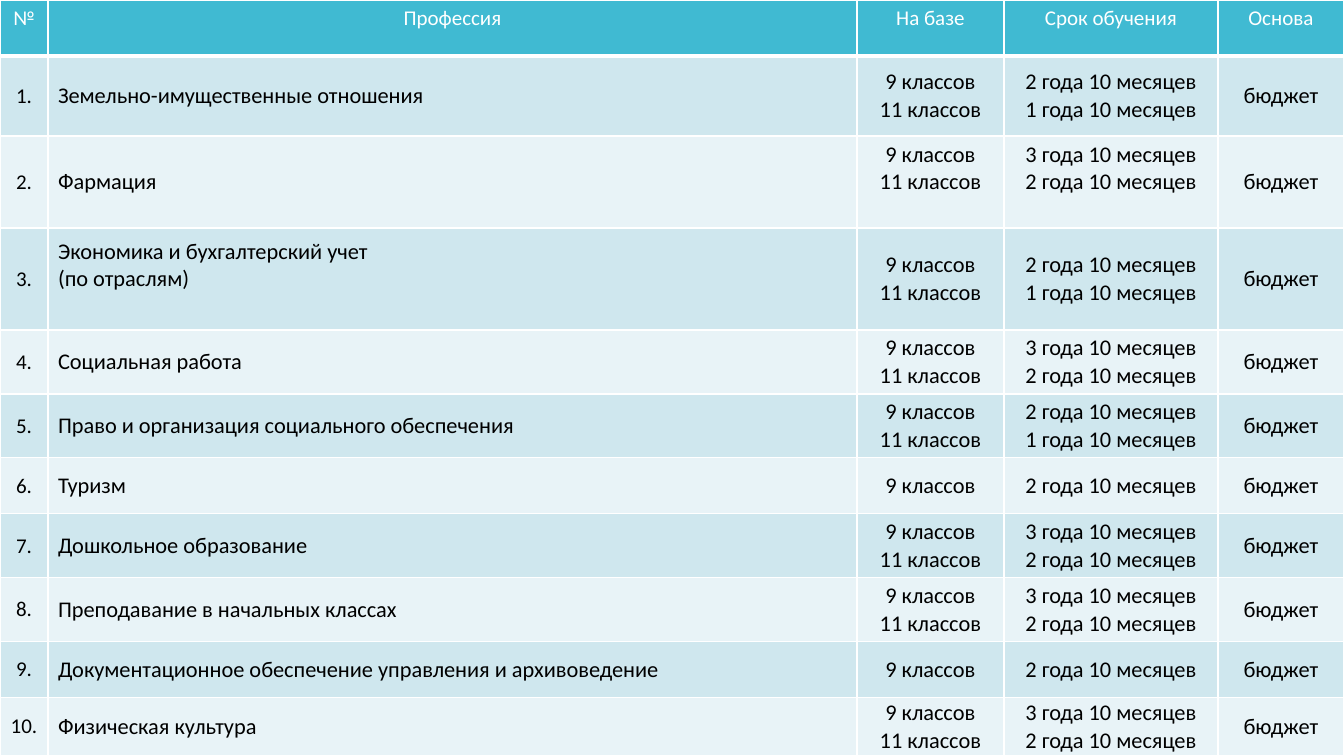
"""Build a slide with a table of professions, entry levels and study terms."""
from lxml import etree
from pptx import Presentation
from pptx.dml.color import RGBColor
from pptx.enum.text import MSO_ANCHOR, PP_ALIGN
from pptx.oxml.ns import qn
from pptx.util import Pt

LEFT, CENTER = PP_ALIGN.LEFT, PP_ALIGN.CENTER
TOP, MIDDLE = MSO_ANCHOR.TOP, MSO_ANCHOR.MIDDLE
COLORS = {"header": "40BAD2", "odd": "CFE7EE", "even": "E8F3F7",
          "white": "FFFFFF", "black": "000000"}
PX = 12192000 / 1344


def px(length):
    return round(length * PX)


def add_border(cell, side, width):
    line = etree.SubElement(cell._tc.get_or_add_tcPr(), qn(f"a:{side}"), w=str(Pt(width)))
    fill = etree.SubElement(line, qn("a:solidFill"))
    etree.SubElement(fill, qn("a:srgbClr"), val=COLORS["white"])


BOTH = ["9 классов", "11 классов"]
NINE = ["9 классов"]
SHORT = ["2 года 10 месяцев", "1 года 10 месяцев"]
LONG = ["3 года 10 месяцев", "2 года 10 месяцев"]
SINGLE = ["2 года 10 месяцев"]
HEADINGS = ["№", "Профессия", "На базе", "Срок обучения", "Основа"]
PROFESSIONS = [
    (["Земельно-имущественные отношения"], BOTH, SHORT),
    (["Фармация"], BOTH, LONG),
    (["Экономика и бухгалтерский учет", "(по отраслям)"], BOTH, SHORT),
    (["Социальная работа"], BOTH, LONG),
    (["Право и организация социального обеспечения"], BOTH, SHORT),
    (["Туризм"], NINE, SINGLE),
    (["Дошкольное образование"], BOTH, LONG),
    (["Преподавание в начальных классах"], BOTH, LONG),
    (["Документационное обеспечение управления и архивоведение"], NINE, SINGLE),
    (["Физическая культура"], BOTH, LONG),
]
COLUMN_WIDTHS = [48, 809, 147, 214, 126]
ROW_HEIGHTS = [56, 80, 92, 102, 64, 64, 56, 64, 64, 56, 58]
RAISED_CELLS = {(2, 2), (2, 3), (3, 1)}

rows = [[[heading] for heading in HEADINGS]]
for number, (profession, base, term) in enumerate(PROFESSIONS, 1):
    rows.append([[f"{number}."], profession, base, term, ["бюджет"]])

deck = Presentation()
deck.slide_width, deck.slide_height = px(1344), px(756)
page = deck.slides.add_slide(deck.slide_layouts[6])
table = page.shapes.add_table(len(rows), len(HEADINGS), 0, 0,
                              px(sum(COLUMN_WIDTHS)), px(sum(ROW_HEIGHTS))).table
table.first_row = False
table.horz_banding = False
for column, width in zip(table.columns, COLUMN_WIDTHS):
    column.width = px(width)
for row, height in zip(table.rows, ROW_HEIGHTS):
    row.height = px(height)

for row_index, row in enumerate(rows):
    is_header = row_index == 0
    band = "header" if is_header else "odd" if row_index % 2 else "even"
    for column_index, lines in enumerate(row):
        cell = table.cell(row_index, column_index)
        if is_header:
            for side, width in (("lnL", 1), ("lnR", 1), ("lnT", 1), ("lnB", 3)):
                add_border(cell, side, width)
        else:
            is_raised = (row_index, column_index) in RAISED_CELLS
            cell.margin_top = px(1)
            cell.margin_bottom = px(28 if is_raised else 1)
        cell.fill.solid()
        cell.fill.fore_color.rgb = RGBColor.from_string(COLORS[band])
        cell.vertical_anchor = TOP if is_header else MIDDLE
        for line_index, text in enumerate(lines):
            frame = cell.text_frame
            para = frame.add_paragraph() if line_index else frame.paragraphs[0]
            para.alignment = LEFT if column_index == 1 and not is_header else CENTER
            span = para.add_run()
            span.text = text
            span.font.name = "Calibri"
            span.font.size = Pt(15 if is_header or column_index == 0 else 16)
            span.font.bold = False
            span.font.color.rgb = RGBColor.from_string(COLORS["white" if is_header else "black"])

deck.save("out.pptx")
